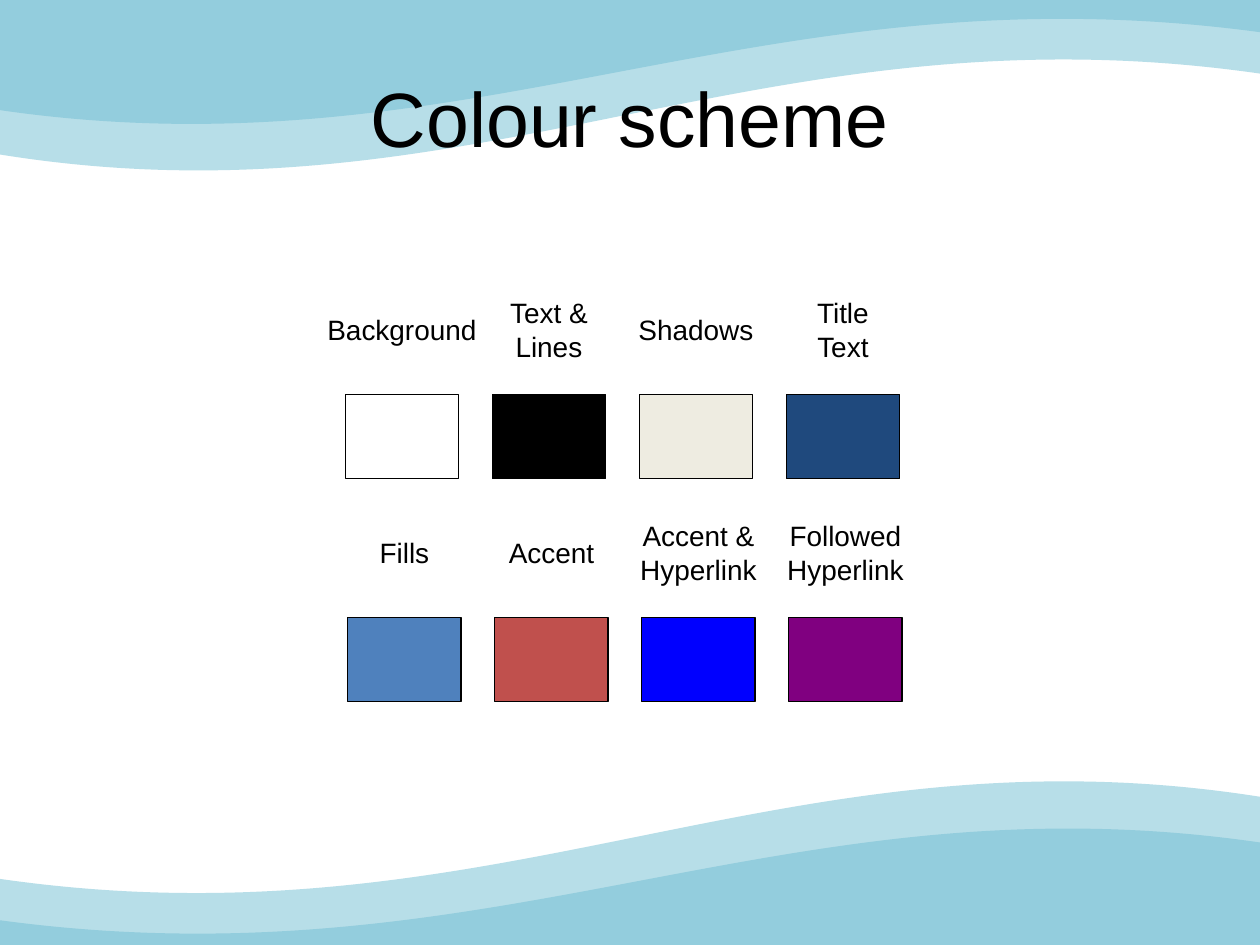
from lxml import etree
from pptx import Presentation
from pptx.dml.color import RGBColor
from pptx.enum.shapes import MSO_SHAPE as Shape
from pptx.enum.text import MSO_ANCHOR as Anchor, MSO_AUTO_SIZE as AutoSize, PP_ALIGN as Align
from pptx.oxml.ns import qn
from pptx.util import Inches, Pt


def color(hex_code):
    return RGBColor.from_string(hex_code)


def add_run(paragraph, text, size):
    paragraph.alignment = Align.CENTER
    run = paragraph.add_run()
    run.text = text
    run.font.size = Pt(size)
    run.font.name = "Arial"
    run.font.color.rgb = color("000000")


presentation = Presentation()
presentation.slide_width = Inches(10)
presentation.slide_height = Inches(7.5)
slide = presentation.slides.add_slide(presentation.slide_layouts[5])
slide.background.fill.solid()
slide.background.fill.fore_color.rgb = color("FFFFFF")

waves = [
    ("B7DEE8", 7.58, 6.2, [(-0.04, 6.97), (3.97, 7.56), (6.21, 5.71), (10.04, 6.33)]),
    ("93CDDD", 7.61, 6.57, [(-0.03, 7.3), (3.97, 7.85), (6.23, 6.13), (10.02, 6.69)]),
    ("B7DEE8", -0.03, 1.35, [(-0.04, 1.22), (3.78, 1.85), (6.03, 0), (10.04, 0.59)]),
    ("93CDDD", -0.05, 0.99, [(-0.03, 0.87), (3.77, 1.43), (6.02, -0.29), (10.03, 0.26)]),
]
for fill, edge, crest, controls in waves:
    left, right = controls[0][0], controls[-1][0]
    builder = slide.shapes.build_freeform(Inches(left), Inches(edge))
    corners = [(left, crest), (right, crest), (right, edge)]
    builder.add_line_segments([(Inches(x), Inches(y)) for x, y in corners], close=True)
    wave = builder.convert_to_shape()
    wave.shadow.inherit = False
    wave.fill.solid()
    wave.fill.fore_color.rgb = color(fill)
    wave.line.fill.background()

    side, crest_line = wave._element.xpath(".//a:lnTo")[:2]
    curve = etree.Element(qn("a:cubicBezTo"))
    crest_line.getparent().replace(crest_line, curve)
    for index, (x, y) in enumerate(controls):
        point = etree.SubElement(curve, qn("a:pt")) if index else side[0]
        point.set("x", str(Inches(x) - wave.left))
        point.set("y", str(Inches(y) - wave.top))

title = slide.shapes.title
slide.shapes._spTree.append(title._element)
title.left, title.top = Inches(0.5), Inches(0.3)
title.width, title.height = Inches(9), Inches(1.25)
title.text_frame.vertical_anchor = Anchor.MIDDLE
add_run(title.text_frame.paragraphs[0], "Colour scheme", 44)

swatch_width, swatch_height, pitch = 0.9, 0.67, 3.5 / 3
swatch_rows = [
    (2.74, 3.13, [
        (["Background"], 1.4, "FFFFFF"),
        (["Text &", "Lines"], 0.86, "000000"),
        (["Shadows"], 1.14, "EEECE1"),
        (["Title", "Text"], 0.65, "1F497D"),
    ]),
    (2.76, 4.9, [
        (["Fills"], 0.62, "4F81BD"),
        (["Accent"], 0.9, "C0504D"),
        (["Accent &", "Hyperlink"], 1.16, "0000FF"),
        (["Followed", "Hyperlink"], 1.16, "800080"),
    ]),
]
for row_left, top, swatches in swatch_rows:
    for column, (lines, label_width, fill) in enumerate(swatches):
        left = row_left + column * pitch
        swatch = slide.shapes.add_shape(
            Shape.RECTANGLE, Inches(left), Inches(top), Inches(swatch_width), Inches(swatch_height)
        )
        swatch.shadow.inherit = False
        swatch.fill.solid()
        swatch.fill.fore_color.rgb = color(fill)
        swatch.line.color.rgb = color("000000")
        swatch.line.width = Pt(0.75)

        label_height = 0.1 + 0.27 * len(lines)
        label = slide.shapes.add_textbox(
            Inches(left + (swatch_width - label_width) / 2),
            Inches(top - 0.51 - label_height / 2),
            Inches(label_width),
            Inches(label_height),
        )
        frame = label.text_frame
        frame.word_wrap = False
        frame.auto_size = AutoSize.SHAPE_TO_FIT_TEXT
        for index, line in enumerate(lines):
            paragraph = frame.add_paragraph() if index else frame.paragraphs[0]
            add_run(paragraph, line, 16)

presentation.save("out.pptx")
